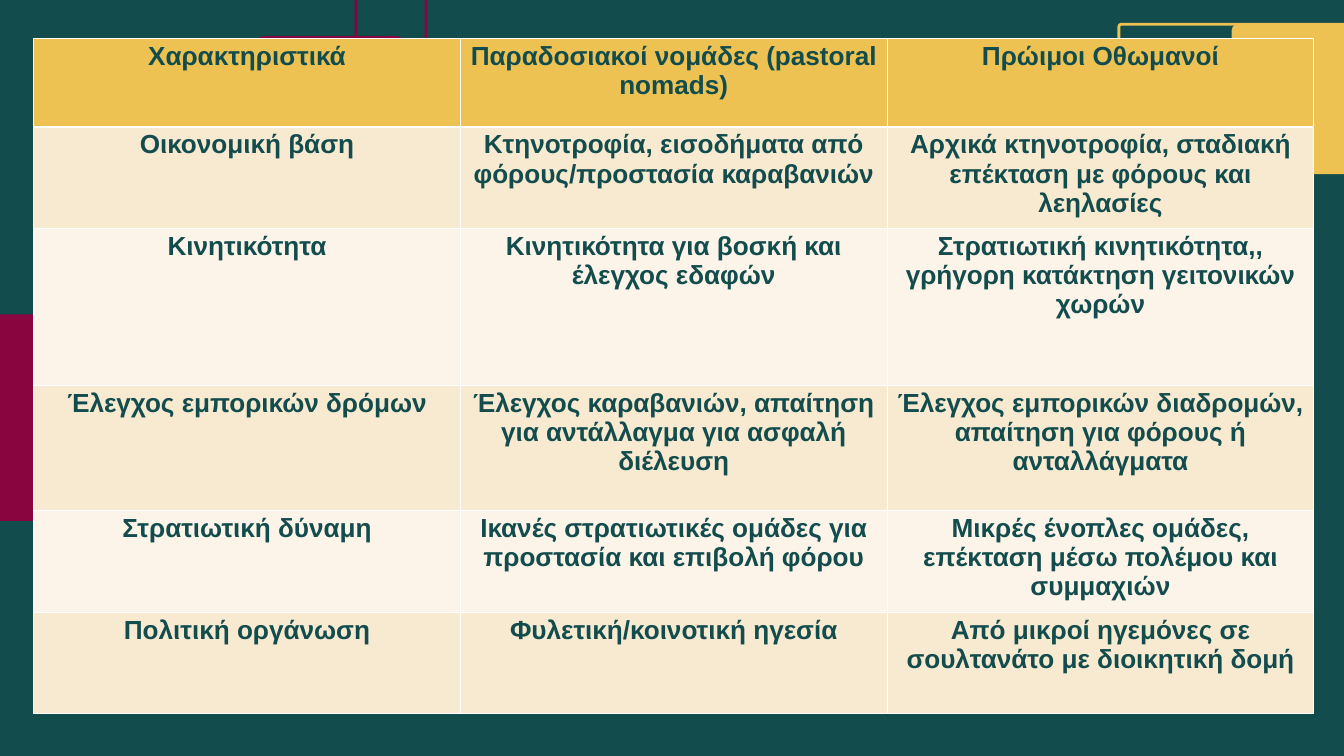
from lxml.etree import SubElement
from pptx import Presentation
from pptx.dml.color import RGBColor
from pptx.enum.shapes import MSO_SHAPE
from pptx.enum.text import PP_ALIGN
from pptx.oxml.ns import qn
from pptx.util import Inches, Pt

COLORS = {
    "teal": "134C4D",
    "gold": "EDC253",
    "wine": "890540",
    "sand": "F8E9D1",
    "cream": "FCF4E9",
    "white": "FFFFFF",
}
FONT = "Arial"
COLUMN_WIDTH = 6.35
ROW_HEIGHTS = [1.32, 1.51, 2.34, 1.86, 1.51, 1.51]
ROWS = [
    ["Χαρακτηριστικά",
     "Παραδοσιακοί νομάδες (pastoral nomads)",
     "Πρώιμοι Οθωμανοί"],
    ["Οικονομική βάση",
     "Κτηνοτροφία, εισοδήματα από φόρους/προστασία καραβανιών",
     "Αρχικά κτηνοτροφία, σταδιακή επέκταση με φόρους και λεηλασίες"],
    ["Κινητικότητα",
     "Κινητικότητα για βοσκή και έλεγχος εδαφών",
     "Στρατιωτική κινητικότητα,, γρήγορη κατάκτηση γειτονικών χωρών"],
    ["Έλεγχος εμπορικών δρόμων",
     "Έλεγχος καραβανιών, απαίτηση για αντάλλαγμα για ασφαλή διέλευση",
     "Έλεγχος εμπορικών διαδρομών, απαίτηση για φόρους ή ανταλλάγματα"],
    ["Στρατιωτική δύναμη",
     "Ικανές στρατιωτικές ομάδες για προστασία και επιβολή φόρου",
     "Μικρές ένοπλες ομάδες, επέκταση μέσω πολέμου και συμμαχιών"],
    ["Πολιτική οργάνωση",
     "Φυλετική/κοινοτική ηγεσία",
     "Από μικροί ηγεμόνες σε σουλτανάτο με διοικητική δομή"],
]


def rgb(name):
    return RGBColor.from_string(COLORS[name])


def add_rounded_box(s, left, top, width, height, radius, fill=None, line=None):
    box = s.shapes.add_shape(MSO_SHAPE.ROUNDED_RECTANGLE, Inches(left),
                             Inches(top), Inches(width), Inches(height))
    box.adjustments[0] = radius / min(width, height)
    box.shadow.inherit = False
    if fill:
        box.fill.solid()
        box.fill.fore_color.rgb = rgb(fill)
    else:
        box.fill.background()
    if line:
        box.line.color.rgb = rgb(line)
        box.line.width = Pt(3)
    else:
        box.line.fill.background()


def set_borders(cell, top, bottom):
    """Draw white cell borders; top and bottom are widths in points."""
    tc_pr = cell._tc.get_or_add_tcPr()
    for side, width in (("L", 1), ("R", 1), ("T", top), ("B", bottom)):
        ln = SubElement(tc_pr, qn(f"a:ln{side}"), w=str(Pt(width)))
        fill = SubElement(ln, qn("a:solidFill"))
        SubElement(fill, qn("a:srgbClr"), val=COLORS["white"])


def format_cell(cell, text, fill):
    cell.fill.solid()
    cell.fill.fore_color.rgb = rgb(fill)
    cell.text_frame.text = text
    p = cell.text_frame.paragraphs[0]
    p.alignment = PP_ALIGN.CENTER
    font = p.runs[0].font
    font.name = FONT
    font.size = Pt(28)
    font.bold = True
    font.color.rgb = rgb("teal")


def add_comparison_table(s):
    columns = len(ROWS[0])
    table = s.shapes.add_table(
        len(ROWS), columns, Inches(0.5), Inches(0.57),
        Inches(columns * COLUMN_WIDTH), Inches(sum(ROW_HEIGHTS))).table
    for column in table.columns:
        column.width = Inches(COLUMN_WIDTH)
    for i, (texts, height) in enumerate(zip(ROWS, ROW_HEIGHTS)):
        table.rows[i].height = Inches(height)
        fill = "gold" if i == 0 else ("cream", "sand")[i % 2]
        for j, text in enumerate(texts):
            cell = table.cell(i, j)
            set_borders(cell, top=3 if i == 1 else 1, bottom=3 if i == 0 else 1)
            format_cell(cell, text, fill)


def main():
    prs = Presentation()
    prs.slide_width, prs.slide_height = Inches(20), Inches(11.25)
    s = prs.slides.add_slide(prs.slide_layouts[6])
    s.background.fill.solid()
    s.background.fill.fore_color.rgb = rgb("teal")

    add_rounded_box(s, -1.5, 4.68, 6.11, 3.07, 0.07, fill="wine")
    add_rounded_box(s, 18.33, 0.36, 2.37, 2.23, 0.09, fill="gold")
    add_rounded_box(s, 16.65, 0.36, 5.73, 1.18, 0.04, line="gold")
    add_rounded_box(s, 5.3, -0.27, 1.04, 1.81, 0.2, line="wine")
    add_rounded_box(s, 3.83, 0.56, 2.17, 2.04, 0.1, line="wine")
    add_comparison_table(s)

    prs.save("out.pptx")


if __name__ == "__main__":
    main()
